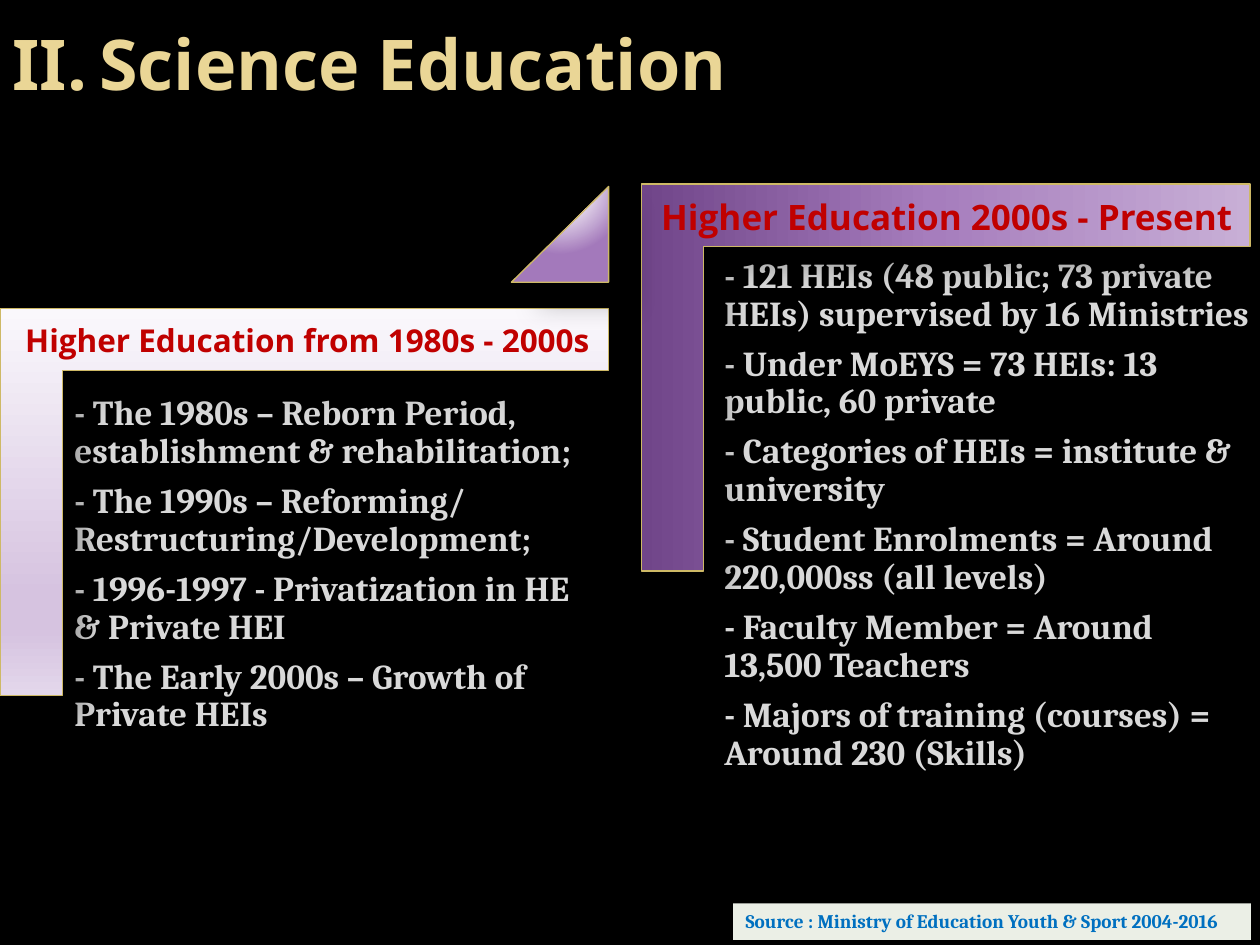
"""Build the slide on higher education within Science Education."""
import pptx
import pptx.dml.color
import pptx.enum.shapes
import pptx.enum.text
import pptx.oxml
import pptx.oxml.ns
import pptx.util
from dataclasses import dataclass

Cm, Pt = pptx.util.Cm, pptx.util.Pt
ALIGN = pptx.enum.text.PP_ALIGN
ANCHOR = pptx.enum.text.MSO_ANCHOR
SHAPE = pptx.enum.shapes.MSO_SHAPE


@dataclass(frozen=True)
class Theme:
    background: str = "000000"
    title: str = "EAD696"
    heading: str = "C00000"
    body: str = "D9D9D9"
    source: str = "0070C0"
    source_fill: str = "EBEFE6"
    outline: str = "CEB966"
    title_font: str = "Noto Sans"
    heading_font: str = "Open Sans"
    body_font: str = "Cambria"
    title_size: int = 40
    body_size: int = 20
    source_size: int = 11


THEME = Theme()
TITLE = "Science Education"
SOURCE = "Source : Ministry of Education Youth & Sport 2004-2016"
PERIODS = [
    {
        "heading": "Higher Education from 1980s - 2000s",
        "heading_size": 18,
        "heading_box": (-0.05, 6.35, 12.5, 1.02),
        "points": [
            "- The 1980s – Reborn Period, establishment & rehabilitation;",
            "- The 1990s – Reforming/ Restructuring/Development;",
            "- 1996-1997 - Privatization in HE & Private HEI",
            "- The Early 2000s – Growth of Private HEIs",
        ],
        "points_box": (1.3, 7.77, 10.92, 4.5),
        "bracket_at": (0, 6.22),
        "stops": [(0, "FAF8FC"), (74, "D6C3E0"), (83, "D6C3E0"), (100, "E3D7EB")],
        "angle": 0,
    },
    {
        "heading": "Higher Education 2000s - Present",
        "heading_size": 20,
        "heading_box": (12.83, 3.81, 12.52, 1.12),
        "points": [
            "- 121 HEIs (48 public; 73 private HEIs) supervised by 16 Ministries",
            "- Under MoEYS = 73 HEIs: 13 public, 60 private",
            "- Categories of HEIs = institute & university",
            "- Student Enrolments = Around 220,000ss (all levels)",
            "- Faculty Member = Around 13,500 Teachers",
            "- Majors of training (courses) = Around 230 (Skills)",
        ],
        "points_box": (14.4, 5, 11, 6.48),
        "bracket_at": (12.93, 3.71),
        "stops": [(0, "704589"), (48, "A67DBD"), (100, "C8AFD6")],
        "angle": 270,
    },
]
BRACKET_WIDTH, BRACKET_HEIGHT = 12.27, 7.8
STEP_BOX = (10.31, 3.76, 1.96, 1.93)
STEP_STOPS = [(0, "FFFFFF"), (23, "FFFFFF"), (100, "A379BB")]
STEP_SHADE = ('<a:path path="circle"><a:fillToRect l="50000" t="-80000" '
              'r="50000" b="180000"/></a:path>')
SHADOW = ('<a:effectLst {ns}><a:outerShdw blurRad="190500" dist="228600" dir="2700000" '
          'rotWithShape="0"><a:srgbClr val="000000"><a:alpha val="26000"/></a:srgbClr>'
          '</a:outerShdw></a:effectLst>')


def drawing_xml(template):
    return pptx.oxml.parse_xml(template.replace("{ns}", pptx.oxml.ns.nsdecls("a")))


def rgb(value):
    return pptx.dml.color.RGBColor.from_string(value)


def place(part, box):
    part.left, part.top, part.width, part.height = map(Cm, box)


def style(paragraph, font_name, size, color):
    font = paragraph.font
    font.name, font.size, font.bold = font_name, Pt(size), True
    font.color.rgb = rgb(color)


def set_marker(paragraph, marker, margin=0):
    properties = paragraph._p.get_or_add_pPr()
    properties.set("marL", str(margin))
    properties.set("indent", str(-margin))
    properties.insert_element_before(drawing_xml(marker), "a:tabLst", "a:defRPr", "a:extLst")


def add_shaded(slide, preset, box, adjustments, stops, shade):
    shape = slide.shapes.add_shape(preset, *map(Cm, box))
    for index, value in enumerate(adjustments):
        shape.adjustments[index] = value
    shape.line.color.rgb = rgb(THEME.outline)
    shape.line.width = Pt(0.75)
    stop_list = "".join(f'<a:gs pos="{pos * 1000}"><a:srgbClr val="{color}"/></a:gs>'
                        for pos, color in stops)
    outline = shape.line._get_or_add_ln()
    outline.addprevious(drawing_xml(
        f'<a:gradFill {{ns}} rotWithShape="1"><a:gsLst>{stop_list}</a:gsLst>{shade}</a:gradFill>'))
    outline.addnext(drawing_xml(SHADOW))
    return shape


def add_bracket(slide, period):
    left, top = period["bracket_at"]
    offset = (BRACKET_WIDTH - BRACKET_HEIGHT) / 2
    box = (left + offset, top - offset, BRACKET_HEIGHT, BRACKET_WIDTH)
    shade = f'<a:lin ang="{period["angle"] * 60000}" scaled="0"/>'
    bracket = add_shaded(slide, SHAPE.CORNER, box, (0.161, 0.161), period["stops"], shade)
    bracket.rotation = 90


def fill_title(title):
    place(title, (0, 0, 25.4, 2.54))
    title.text_frame.text = TITLE
    title.text_frame.vertical_anchor = ANCHOR.MIDDLE
    paragraph = title.text_frame.paragraphs[0]
    paragraph.alignment = ALIGN.LEFT
    set_marker(paragraph, '<a:buAutoNum {ns} type="romanUcPeriod" startAt="2"/>', Cm(1.75))
    style(paragraph, THEME.title_font, THEME.title_size, THEME.title)


def fill_points(body, period):
    place(body, period["points_box"])
    frame = body.text_frame
    frame.text = "\n".join(period["points"])
    frame.auto_size = pptx.enum.text.MSO_AUTO_SIZE.NONE
    frame.vertical_anchor = ANCHOR.TOP
    frame.margin_left = frame.margin_right = frame.margin_top = frame.margin_bottom = Cm(0.2)
    for paragraph in frame.paragraphs:
        paragraph.line_spacing = 0.9
        paragraph.space_before, paragraph.space_after = Pt(0), Pt(7)
        set_marker(paragraph, "<a:buNone {ns}/>")
        style(paragraph, THEME.body_font, THEME.body_size, THEME.body)


def add_label(slide, text, box, alignment, font_name, size, color):
    label = slide.shapes.add_textbox(*map(Cm, box))
    label.text_frame.word_wrap = True
    label.text_frame.text = text
    paragraph = label.text_frame.paragraphs[0]
    paragraph.alignment = alignment
    style(paragraph, font_name, size, color)
    return label


def main():
    deck = pptx.Presentation()
    deck.slide_width, deck.slide_height = Cm(25.4), Cm(19.05)
    slide = deck.slides.add_slide(deck.slide_layouts.get_by_name("Two Content"))
    slide.background.fill.solid()
    slide.background.fill.fore_color.rgb = rgb(THEME.background)

    fill_title(slide.shapes.title)
    for index, period in enumerate(PERIODS, start=1):
        fill_points(slide.placeholders[index], period)
        add_bracket(slide, period)
    add_shaded(slide, SHAPE.ISOSCELES_TRIANGLE, STEP_BOX, (1,), STEP_STOPS, STEP_SHADE)
    for period in PERIODS:
        add_label(slide, period["heading"], period["heading_box"], ALIGN.CENTER,
                  THEME.heading_font, period["heading_size"], THEME.heading)
    source = add_label(slide, SOURCE, (14.78, 18.21, 10.44, 0.74), ALIGN.LEFT,
                       THEME.body_font, THEME.source_size, THEME.source)
    source.fill.solid()
    source.fill.fore_color.rgb = rgb(THEME.source_fill)
    deck.save("out.pptx")


if __name__ == "__main__":
    main()
